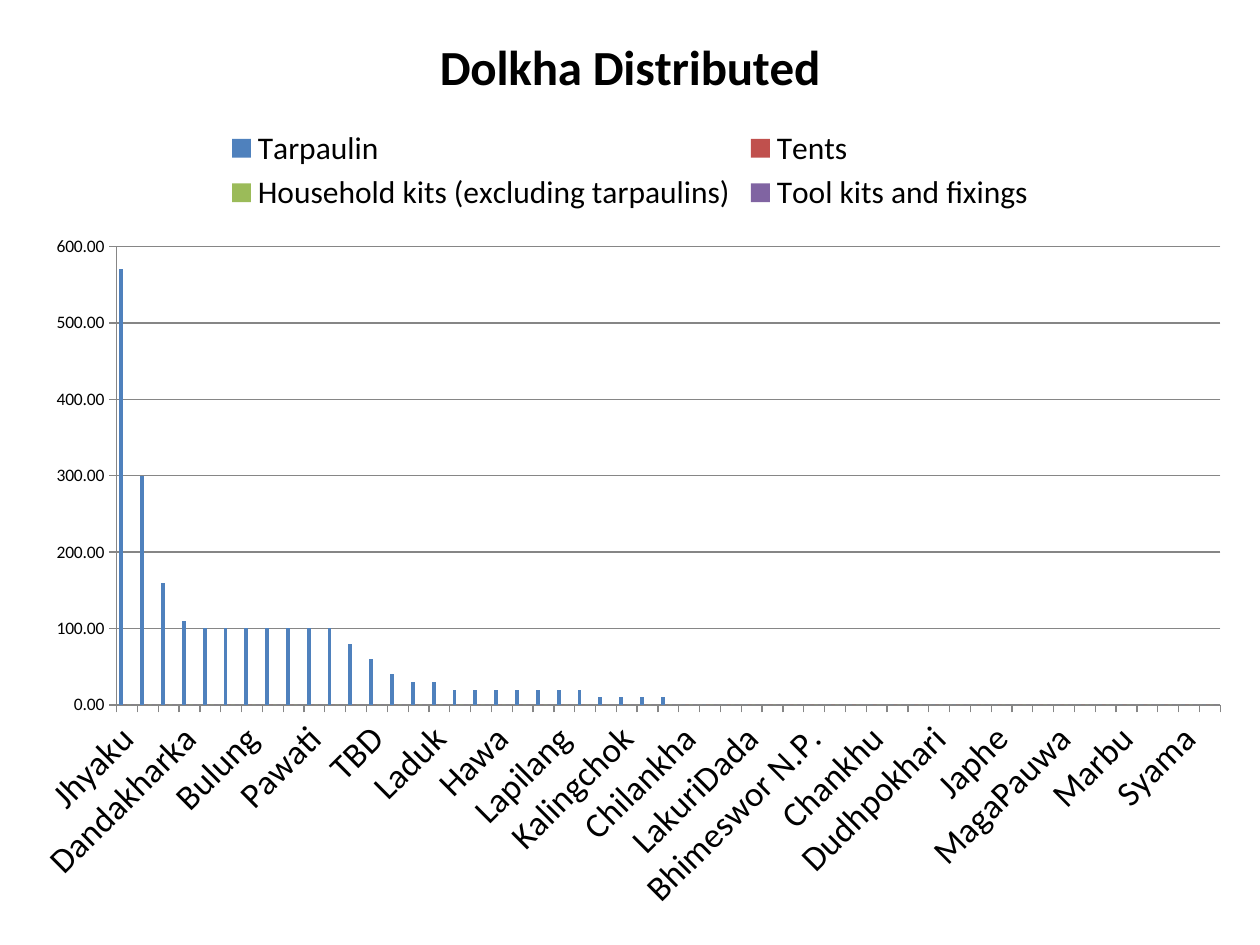
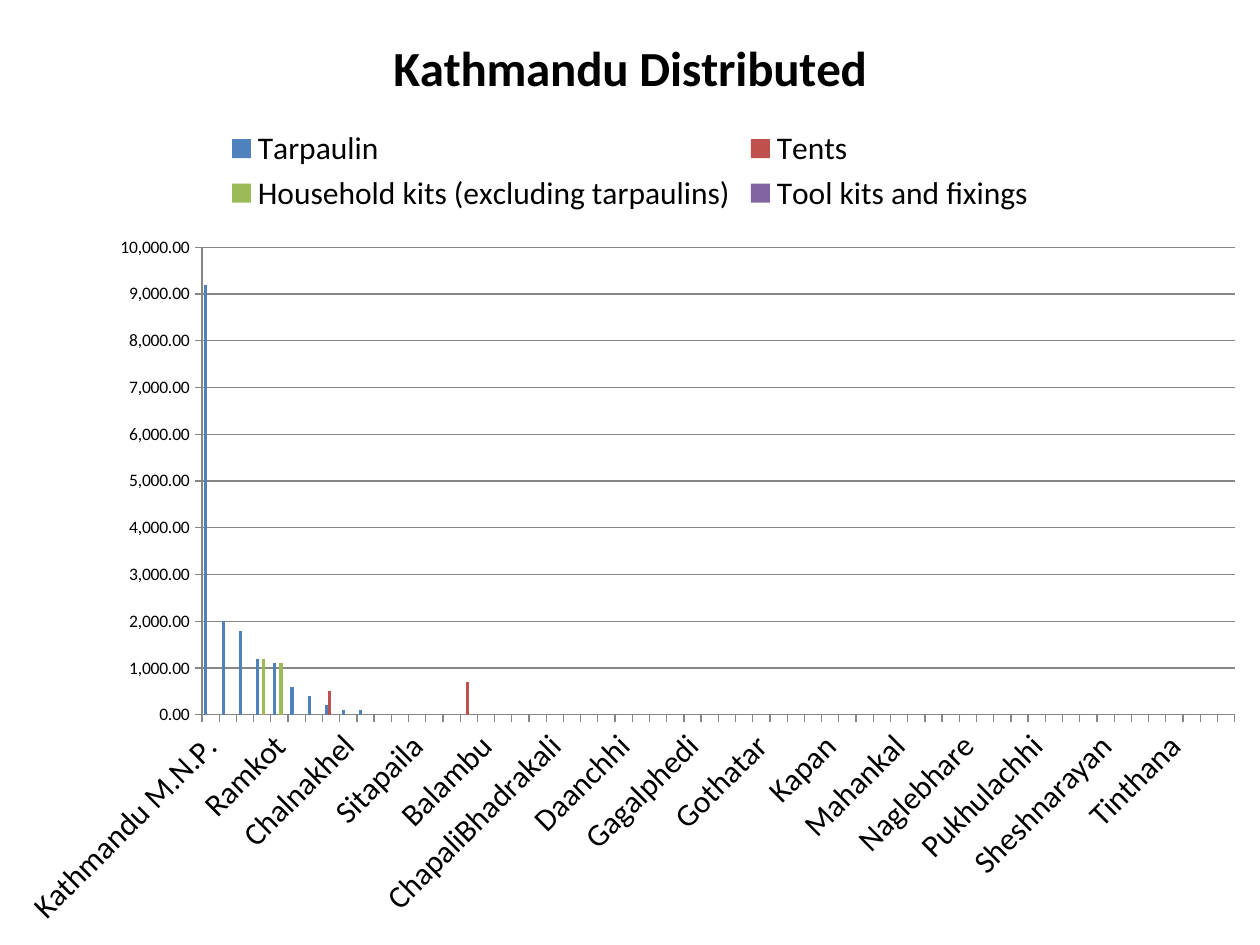
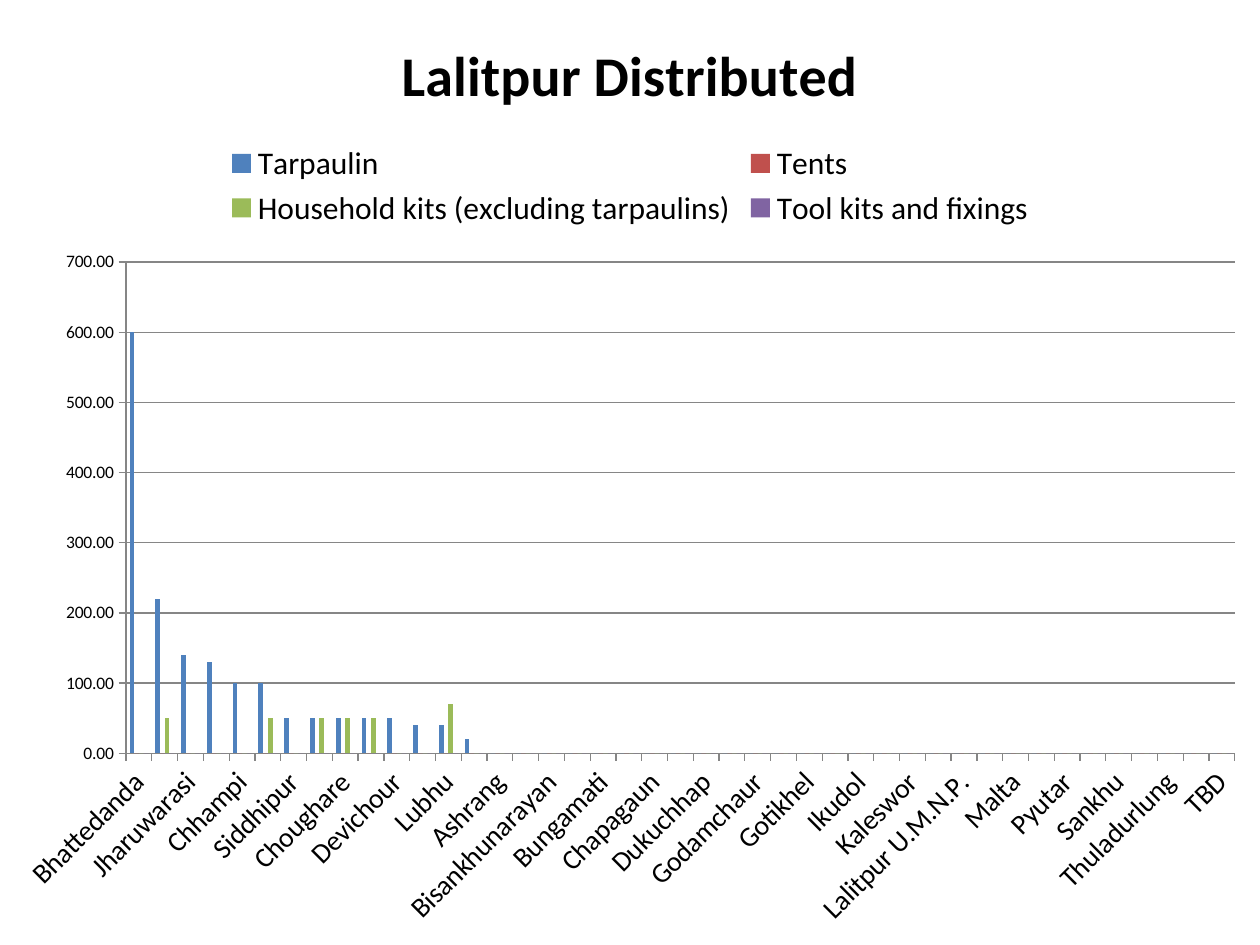
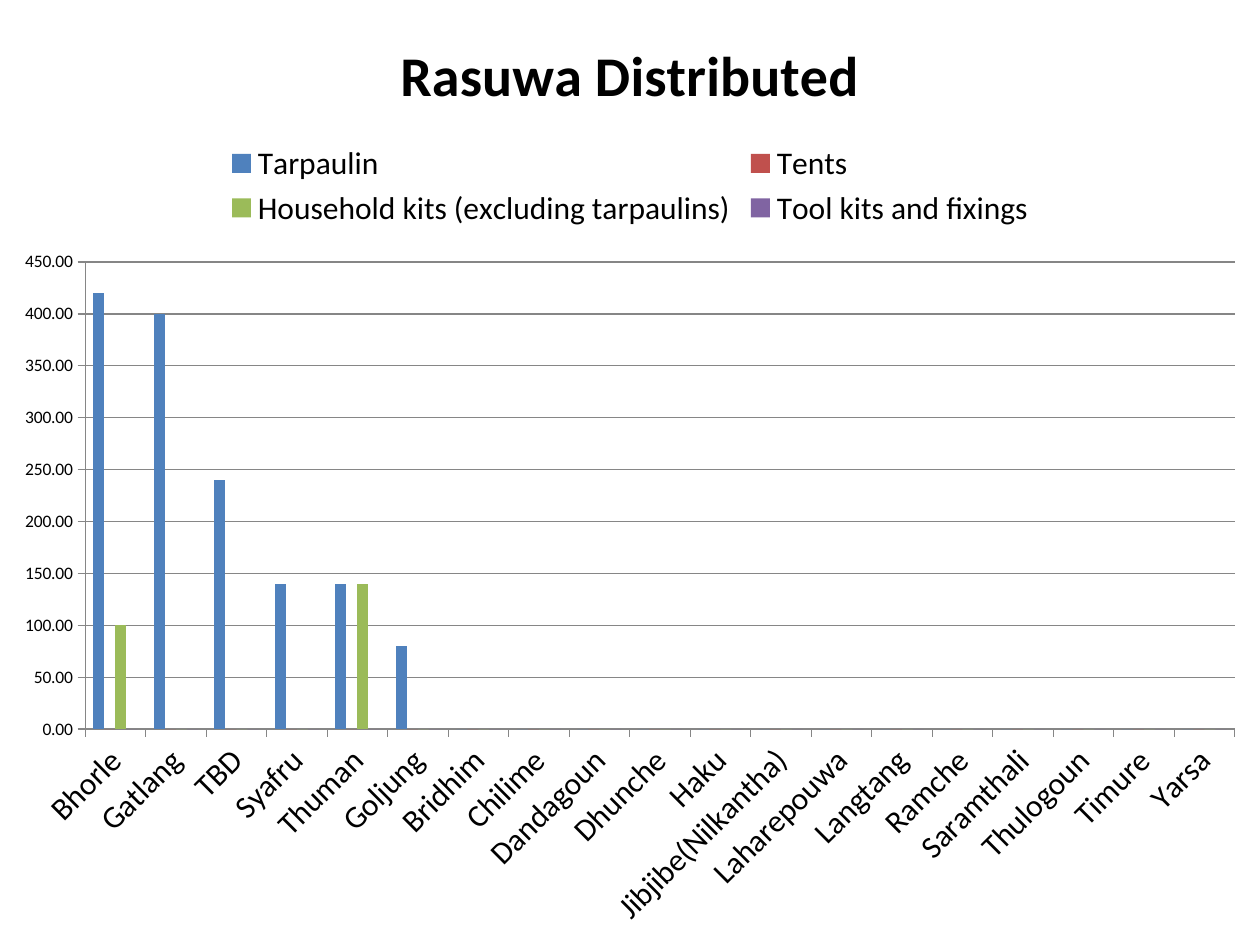
from pptx import Presentation
from pptx.chart.data import CategoryChartData
from pptx.dml.color import RGBColor
from pptx.enum.chart import XL_CHART_TYPE, XL_LEGEND_POSITION, XL_TICK_MARK
from pptx.util import Pt

COLUMN = XL_CHART_TYPE.COLUMN_CLUSTERED
TOP = XL_LEGEND_POSITION.TOP
OUT = XL_TICK_MARK.OUTSIDE

BLACK = RGBColor(0x00, 0x00, 0x00)
GRAY = RGBColor(0x86, 0x86, 0x86)
BLUE = RGBColor(0x4F, 0x81, 0xBD)
RED = RGBColor(0xC0, 0x50, 0x4D)
GREEN = RGBColor(0x9B, 0xBB, 0x59)
PURPLE = RGBColor(0x80, 0x64, 0xA2)

FONT = "Calibri"
WIDE, HIGH = 720, 540
FULL = (0, 0, WIDE, HIGH)
INSET = (8.64, 0, 702.72, 530.64)
SLANT = "-2700000"

ITEMS = (
    ("Tarpaulin", BLUE),
    ("Tents", RED),
    ("Household kits (excluding tarpaulins)", GREEN),
    ("Tool kits and fixings", PURPLE),
)

DOLKHA = (
    "Jhyaku,Sunakhani,Bigu,Dandakharka,Babare,Bhedapu,Bulung,Jiri,Melung,"
    "Pawati,Lamabagar,Orang,TBD,Gairimudi,Katakuti,Laduk,Alampu,Bhirkot,"
    "Hawa,Jhule,Khare,Lapilang,Suri,Namdu,Kalingchok,SusmaChhemawati,Fasku,"
    "Chilankha,Kabhre,Khopachagu,LakuriDada,Sahare,Sailungeswor,"
    "Bhimeswor N.P.,Bhusaphedi,Bocha,Chankhu,Chhetrapa,Chyama,Dudhpokhari,"
    "GauriSankar,GhangSukathokar,Japhe,Jugu,Lamidada,MagaPauwa,Mali,Malu,"
    "Marbu,Mirge,Sundrawati,Syama,Thulopatal"
)
KATHMANDU = (
    "Kathmandu M.N.P.,Lapsephedi,Kabhresthali,Bhimdhunga,Ramkot,Sangla,"
    "JhorMahankal,Kirtipur N.P.,Chalnakhel,Talkududechour,Futung,Jorpati,"
    "Sitapaila,Aalapot,BaadBhanjyang,Bajrayogini(Sankhu),Balambu,Baluwa,"
    "Bhadrabas,Budanilkantha,ChapaliBhadrakali,Chhaimale,ChouketarDahachok,"
    "Chunikhel,Daanchhi,Daxinkali,Dhapasi,Dharmasthali,Gagalphedi,"
    "Gokarneswor,Goldhunga,Gonggabu,Gothatar,IchangNarayan,Indrayani,"
    "Jitpurphedi,Kapan,KhadkaBhadrakali,Machhegaun,Mahadevathan,Mahankal,"
    "Manmaiju,Matatirtha,Mulpani,Naglebhare,NaikapNayaBhanjyang,"
    "NaikapPuranoBhanjyang,Nayapati,Pukhulachhi,Satikhel,Satungal,Seuchatar,"
    "Sheshnarayan,Sundarijal,Suntol,Thankot,Tinthana,TokhaChandeswori,"
    "TokhaSarswoti,TBD"
)
LALITPUR = (
    "Bhattedanda,Lele,Jharuwarasi,Thaiba,Chhampi,Nallu,Siddhipur,Bhardev,"
    "Choughare,Dalchoki,Devichour,Thecho,Lubhu,Dhapakhel,Ashrang,Badikhel,"
    "Bisankhunarayan,Bukhel,Bungamati,Chandanpur,Chapagaun,Dhusel,Dukuchhap,"
    "Gimdi,Godamchaur,Godawari,Gotikhel,Harisiddhi,Ikudol,Imadol,Kaleswor,"
    "Khokana,Lalitpur U.M.N.P.,Lamatar,Malta,Manikhel,Pyutar,Sainbu,Sankhu,"
    "Sunakothi,Thuladurlung,Tikathali,TBD"
)
RASUWA = (
    "Bhorle,Gatlang,TBD,Syafru,Thuman,Goljung,Bridhim,Chilime,Dandagoun,"
    "Dhunche,Haku,Jibjibe(Nilkantha),Laharepouwa,Langtang,Ramche,Saramthali,"
    "Thulogoun,Timure,Yarsa"
)

# Title, title size, label size, box, places, then the counts of each item
# up to its last place that is not zero.
SLIDES = (
    ("Dolkha Distributed", 28, 20, INSET, DOLKHA, (
        [570, 300, 160, 110] + [100] * 7 + [80, 60, 40, 30, 30]
        + [20] * 7 + [10] * 4,
        [], [], [])),
    ("Kathmandu Distributed", 28, 18, FULL, KATHMANDU, (
        [9200, 2000, 1800, 1200, 1100, 600, 400, 200, 100, 100],
        [0] * 7 + [500] + [0] * 7 + [700],
        [0, 0, 0, 1200, 1100], [])),
    ("Lalitpur Distributed", 32, 16, FULL, LALITPUR, (
        [600, 220, 140, 130, 100, 100] + [50] * 5 + [40, 40, 20],
        [],
        [0, 50, 0, 0, 0, 50, 0, 50, 50, 50, 0, 0, 70], [])),
    ("Rasuwa Distributed", 32, 18, FULL, RASUWA, (
        [420, 400, 240, 140, 140, 80],
        [],
        [100, 0, 0, 0, 140], [])),
)


def style(font, size, bold=False):
    font.name = FONT
    font.size = Pt(size)
    font.bold = bold
    font.color.rgb = BLACK


def rule(line):
    line.color.rgb = GRAY
    line.width = Pt(0.75)


def make_data(places, counts):
    """Fill each item's counts with zeros up to the number of places."""
    names = places.split(",")
    data = CategoryChartData()
    data.categories = names
    for (item, _), vals in zip(ITEMS, counts):
        data.add_series(item, vals + [0] * (len(names) - len(vals)))
    return data


def set_title(chart, text, size):
    chart.has_title = True
    run = chart.chart_title.text_frame.paragraphs[0].add_run()
    run.text = text
    style(run.font, size, True)


def set_legend(chart):
    chart.has_legend = True
    chart.legend.position = TOP
    chart.legend.include_in_layout = False
    style(chart.legend.font, 18)


def set_axes(chart, size):
    for axis, points in ((chart.category_axis, size), (chart.value_axis, 10)):
        axis.major_tick_mark = OUT
        rule(axis.format.line)
        style(axis.tick_labels.font, points)
    for body in chart.element.xpath("//c:catAx/c:txPr/a:bodyPr"):
        body.set("rot", SLANT)
    axis = chart.value_axis
    axis.has_major_gridlines = True
    rule(axis.major_gridlines.format.line)
    axis.tick_labels.number_format = "#,##0.00"
    axis.tick_labels.number_format_is_linked = False


def set_bars(plot):
    plot.gap_width = 150
    plot.vary_by_categories = False
    for bars, (_, color) in zip(plot.series, ITEMS):
        bars.format.fill.solid()
        bars.format.fill.fore_color.rgb = color


def add_slide(deck, title, size, label, box, places, counts):
    slide = deck.slides.add_slide(deck.slide_layouts[6])
    frame = slide.shapes.add_chart(
        COLUMN, *map(Pt, box), make_data(places, counts))
    chart = frame.chart
    style(chart.font, 10)
    set_title(chart, title, size)
    set_legend(chart)
    set_axes(chart, label)
    set_bars(chart.plots[0])


def main():
    deck = Presentation()
    deck.slide_width, deck.slide_height = Pt(WIDE), Pt(HIGH)
    for row in SLIDES:
        add_slide(deck, *row)
    deck.save("out.pptx")


if __name__ == "__main__":
    main()
